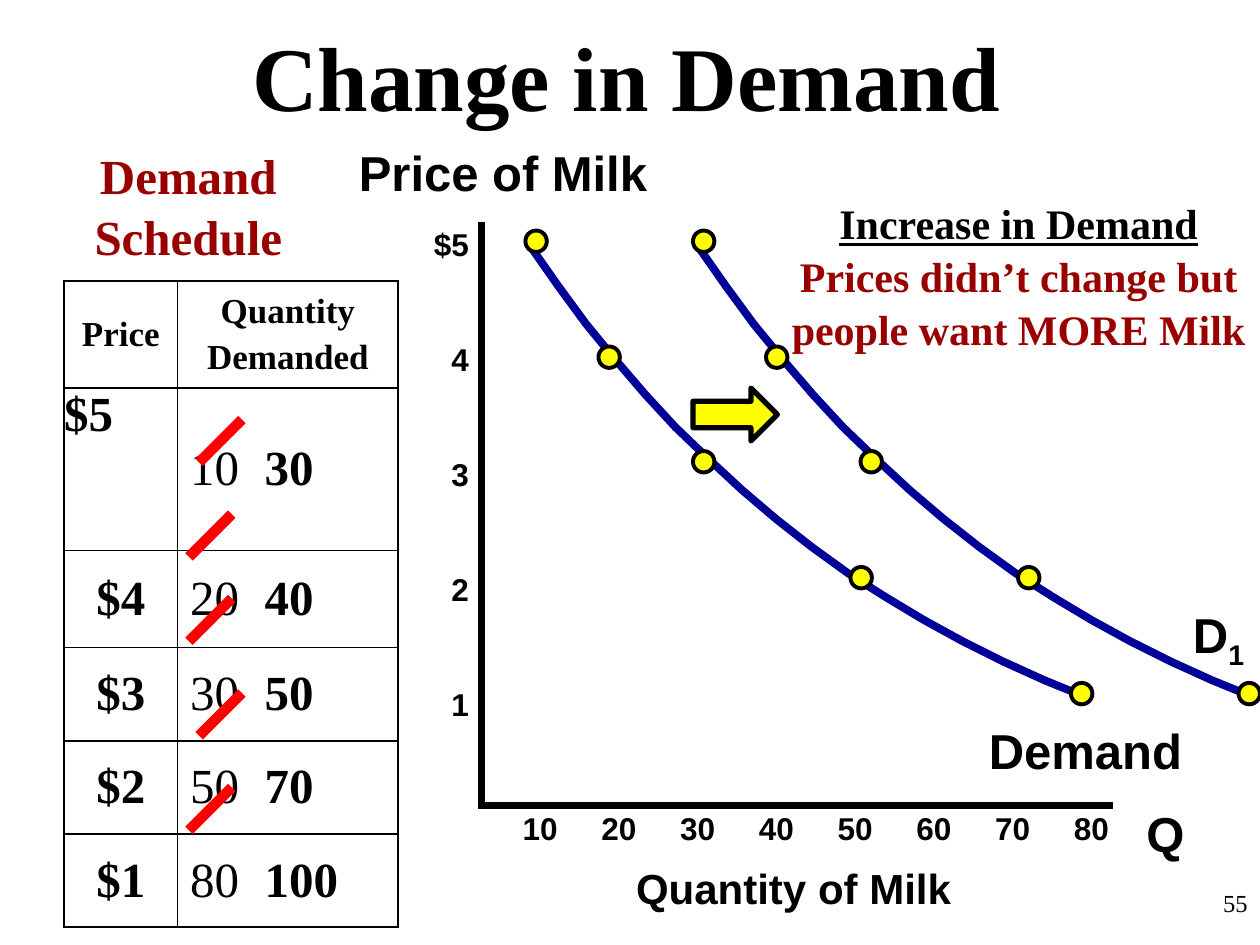
from pptx import Presentation
from pptx.dml.color import RGBColor
from pptx.enum import shapes, text
from pptx.oxml import parse_xml
from pptx.oxml.ns import nsdecls, qn
from pptx.util import Inches, Pt
from lxml import etree

BLACK = RGBColor(0, 0, 0)
MAROON = RGBColor(0x99, 0, 0)
NAVY = RGBColor(0, 0, 0x99)
RED = RGBColor(0xFF, 0, 0)
YELLOW = RGBColor(0xFF, 0xFF, 0)
SERIF, SANS = "Times New Roman", "Arial"
LEFT, CENTER, RIGHT = text.PP_ALIGN.LEFT, text.PP_ALIGN.CENTER, text.PP_ALIGN.RIGHT
TOP, MIDDLE = text.MSO_ANCHOR.TOP, text.MSO_ANCHOR.MIDDLE

SCHEDULE = [("$5", "10", "30"), ("$4", "20", "40"), ("$3", "30", "50"),
            ("$2", "50", "70"), ("$1", "80", "100")]
ROW_HEIGHTS = [0.85, 1.29, 0.77, 0.74, 0.74, 0.74]
STRIKES = [(1.07, 1.1), (0.99, 1.85), (0.99, 2.52), (1.07, 3.27), (0.99, 4.02)]
CURVE = [(0.4, 0.21), (0.61, 0.51), (0.83, 0.81), (1.06, 1.09), (1.3, 1.37),
         (1.54, 1.63), (1.8, 1.88), (2.07, 2.13), (2.34, 2.36), (2.62, 2.58),
         (2.91, 2.79), (3.21, 2.98), (3.51, 3.16), (3.82, 3.33), (4.14, 3.49),
         (4.47, 3.64), (4.79, 3.77)]
DOTS = [(0.35, 0.07), (0.93, 0.99), (1.68, 1.82), (2.93, 2.74), (4.68, 3.66)]
DEMAND_SHIFT = 1.33


def write(frame, *lines, size=28, font=SERIF, color=BLACK, bold=True, align=LEFT,
          anchor=TOP, before=0, spacing=None, tabs=()):
    """Each line is a string or a list of (string, overrides) runs."""
    frame.word_wrap = True
    frame.vertical_anchor = anchor
    for i, line in enumerate(lines):
        paragraph = frame.paragraphs[0] if i == 0 else frame.add_paragraph()
        paragraph.alignment = align
        if spacing:
            paragraph.line_spacing = spacing
        if i and before:
            paragraph.space_before = Pt(before)
        if tabs:
            stops = etree.SubElement(paragraph._p.get_or_add_pPr(), qn("a:tabLst"))
            for stop in tabs:
                etree.SubElement(stops, qn("a:tab"), pos=str(Inches(stop)), algn="l")
        for words, changes in [(line, {})] if isinstance(line, str) else line:
            run = paragraph.add_run()
            run.text = words
            run.font.name = font
            run.font.size = Pt(size)
            run.font.bold = changes.get("bold", bold)
            run.font.color.rgb = changes.get("color", color)
            if changes.get("underline"):
                run.font.underline = True
            if "baseline" in changes:
                run.font._element.set("baseline", str(changes["baseline"]))


def add_label(slide, box, *lines, **style):
    label = slide.shapes.add_textbox(*map(Inches, box))
    write(label.text_frame, *lines, **style)


def add_line(slide, start, end, color, width):
    line = slide.shapes.add_connector(
        shapes.MSO_CONNECTOR.STRAIGHT, *map(Inches, (*start, *end)))
    line.line.color.rgb = color
    line.line.width = Pt(width)
    etree.SubElement(line._element.spPr, qn("a:effectLst"))


def add_marker(slide, kind, box, width):
    marker = slide.shapes.add_shape(kind, *map(Inches, box))
    marker.shadow.inherit = False
    marker.fill.solid()
    marker.fill.fore_color.rgb = YELLOW
    marker.line.color.rgb = BLACK
    marker.line.width = Pt(width)


def format_cell(cell, *lines, indent=0, **style):
    cell.margin_top = cell.margin_bottom = cell.margin_right = 0
    cell.margin_left = Inches(indent)
    cell.vertical_anchor = style.get("anchor", MIDDLE)
    write(cell.text_frame, *lines, **style)
    # The anchor of a cell lives on the cell, not on its text body
    cell.text_frame.vertical_anchor = None
    properties = cell._tc.get_or_add_tcPr()
    for side in ("lnL", "lnR", "lnT", "lnB"):
        properties.append(parse_xml(
            f'<a:{side} {nsdecls("a")} w="{Pt(1)}"><a:solidFill>'
            f'<a:srgbClr val="{BLACK}"/></a:solidFill></a:{side}>'))
    cell.fill.background()


def add_schedule(slide, x, y):
    """Demand table with the old quantities struck through."""
    table = slide.shapes.add_table(
        len(ROW_HEIGHTS), 2, Inches(x), Inches(y), Inches(2.65),
        Inches(sum(ROW_HEIGHTS))).table
    table.first_row = table.horz_banding = False
    for column, width in zip(table.columns, (0.9, 1.75)):
        column.width = Inches(width)
    for row, height in zip(table.rows, ROW_HEIGHTS):
        row.height = Inches(height)
    format_cell(table.cell(0, 0), "Price", size=20, align=CENTER)
    format_cell(table.cell(0, 1), "Quantity", "Demanded", size=20, align=CENTER, before=4)
    for i, (price, old, new) in enumerate(SCHEDULE, 1):
        place = {"align": LEFT, "anchor": TOP} if i == 1 else {"align": CENTER}
        format_cell(table.cell(i, 0), price, **place)
        format_cell(table.cell(i, 1), [(old + "\t", {"bold": False}), (new, {})],
                    indent=0.1, tabs=[0.59])
    for dx, dy in STRIKES:
        add_line(slide, (x + dx, y + dy + 0.34), (x + dx + 0.34, y + dy), RED, 6)


def add_demand_curve(slide, x, y):
    points = [(Inches(x + dx), Inches(y + dy)) for dx, dy in CURVE]
    builder = slide.shapes.build_freeform(*points[0])
    builder.add_line_segments(points[1:], close=False)
    curve = builder.convert_to_shape()
    curve.shadow.inherit = False
    curve.fill.background()
    curve.line.color.rgb = NAVY
    curve.line.width = Pt(4.5)
    for dx, dy in DOTS:
        add_marker(slide, shapes.MSO_SHAPE.OVAL, (x + dx, y + dy, 0.17, 0.17), 2.25)


def add_graph(slide, x, y):
    """Axes with labels, both demand curves and the shift arrow."""
    add_line(slide, (x, y), (x, y + 4.66), BLACK, 4)
    add_line(slide, (x - 0.03, y + 4.63), (x + 5.01, y + 4.63), BLACK, 4)
    add_label(slide, (x - 0.48, y - 0.02, 0.48, 4.01), "$5", "4", "3", "2", "1",
              size=18, font=SANS, align=RIGHT, before=44)
    add_label(slide, (x + 0.23, y + 4.61, 4.95, 0.4),
              "\t".join(str(quantity) for quantity in range(10, 90, 10)),
              size=18, font=SANS, tabs=[0.625 * i for i in range(1, 8)])
    add_label(slide, (x - 1.07, y - 0.68, 2.52, 0.57), "Price of Milk",
              font=SANS, anchor=MIDDLE)
    add_label(slide, (x + 1.13, y + 5.03, 2.72, 0.51), "Quantity of Milk",
              size=24, font=SANS, anchor=MIDDLE)
    add_label(slide, (x + 5.18, y + 4.57, 0.5, 0.57), "Q", font=SANS)
    add_demand_curve(slide, x, y)
    add_marker(slide, shapes.MSO_SHAPE.RIGHT_ARROW, (x + 1.68, y + 1.32, 0.67, 0.42), 3)
    add_demand_curve(slide, x + DEMAND_SHIFT, y)
    add_label(slide, (x + 3.93, y + 3.91, 1.75, 0.57), "Demand", font=SANS)
    add_label(slide, (x + 5.55, y + 2.99, 0.63, 0.57),
              [("D", {}), ("1", {"baseline": -25000})], font=SANS)


def set_title(slide, box, words):
    title = slide.shapes.title
    title.left, title.top, title.width, title.height = map(Inches, box)
    write(title.text_frame, words, size=52, align=CENTER, anchor=MIDDLE)


def main():
    deck = Presentation()
    deck.slide_width, deck.slide_height = Inches(10), Inches(7.5)
    slide = deck.slides.add_slide(deck.slide_layouts[5])
    set_title(slide, (0.25, 0.13, 9.44, 0.94), "Change in Demand")
    add_label(slide, (0.33, 1.08, 2.33, 1.03), "Demand Schedule",
              color=MAROON, align=CENTER, spacing=1.05)
    add_schedule(slide, 0.51, 2.23)
    add_graph(slide, 3.82, 1.76)
    add_label(slide, (6.17, 1.5, 3.83, 1.27),
              [("Increase in Demand", {"underline": True})],
              [("Prices didn’t change but people want MORE Milk", {"color": MAROON})],
              size=24, align=CENTER, spacing=1.05)
    add_label(slide, (7.92, 7, 2.08, 0.5), "55", size=14, bold=False, align=RIGHT)
    deck.save("out.pptx")


if __name__ == "__main__":
    main()
